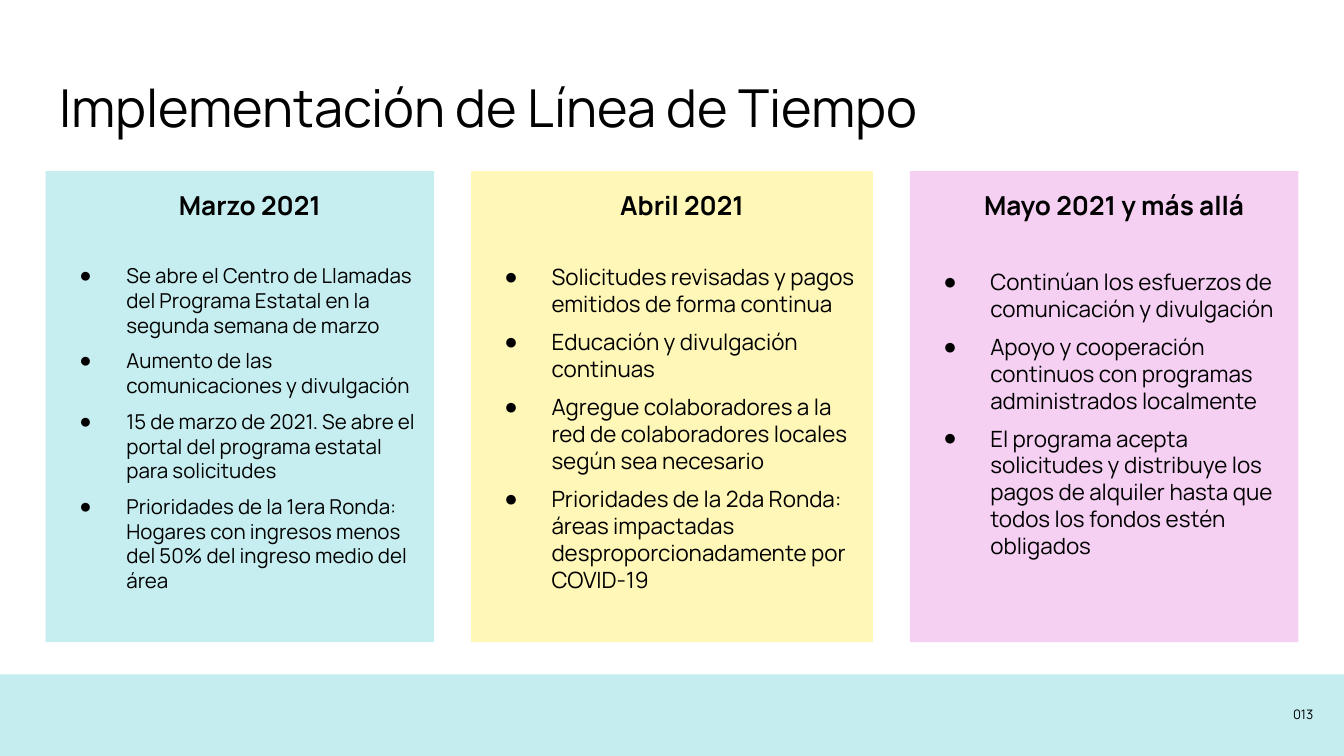
from dataclasses import dataclass

from lxml.etree import SubElement
from pptx import Presentation
from pptx.dml.color import RGBColor
from pptx.enum.shapes import MSO_SHAPE as Preset
from pptx.enum.text import MSO_ANCHOR as Anchor, MSO_AUTO_SIZE as AutoSize, PP_ALIGN as Align
from pptx.oxml.ns import qn
from pptx.util import Inches, Pt

WIDTH = Inches(10)
HEIGHT = WIDTH * 9 // 16
FONT = "Manrope"
BULLET_FONT = "Arial"
COLORS = {
    "text": "000000",
    "band": "C5ECEF",
    "march": "C6EDEF",
    "april": "FFF391",
    "may": "F0B7EE",
}
MARGIN = 3.4
COLUMN_TOP, COLUMN_HEIGHT = 22.64, 62.3


@dataclass(frozen=True)
class PercentBox:
    left: float
    top: float
    width: float
    height: float

    def lengths(self) -> tuple:
        return (int(WIDTH * self.left / 100), int(HEIGHT * self.top / 100),
                int(WIDTH * self.width / 100), int(HEIGHT * self.height / 100))


@dataclass(frozen=True)
class Column:
    heading: str
    items: tuple
    color: str
    opacity: int
    width: float
    size: int
    first_gap: float


COLUMNS = (
    Column("Marzo 2021", (
        "Se abre el Centro de Llamadas del Programa Estatal en la segunda semana de marzo",
        "Aumento de las comunicaciones y divulgación",
        "15 de marzo de 2021. Se abre el portal del programa estatal para solicitudes",
        "Prioridades de la 1era Ronda: Hogares con ingresos menos del 50% del ingreso medio del área",
    ), "march", 100, 28.9, 11, 22.8),
    Column("Abril 2021", (
        "Solicitudes revisadas y pagos emitidos de forma continua",
        "Educación y divulgación continuas",
        "Agregue colaboradores a la red de colaboradores locales según sea necesario",
        "Prioridades de la 2da Ronda: áreas impactadas desproporcionadamente por COVID-19",
    ), "april", 65, 29.9, 12, 22.8),
    Column("Mayo 2021 y más allá", (
        "Continúan los esfuerzos de comunicación y divulgación",
        "Apoyo y cooperación continuos con programas administrados localmente",
        "El programa acepta solicitudes y distribuye los pagos de alquiler hasta que todos los fondos estén obligados",
    ), "may", 65, 28.9, 12, 25.3),
)


def place(shape, box: PercentBox) -> None:
    shape.left, shape.top, shape.width, shape.height = box.lengths()


def fill_shape(shape, color: str, opacity: int = 100) -> None:
    shape.fill.solid()
    shape.fill.fore_color.rgb = RGBColor.from_string(COLORS[color])
    shape.line.fill.background()
    if opacity < 100:
        rgb = shape.fill._xPr.find(f".//{qn('a:srgbClr')}")
        SubElement(rgb, qn("a:alpha"), val=str(opacity * 1000))


def add_rectangle(slide, box: PercentBox):
    shape = slide.shapes.add_shape(Preset.RECTANGLE, *box.lengths())
    shape.shadow.inherit = False
    return shape


def prepare_frame(shape, anchor=Anchor.TOP):
    frame = shape.text_frame
    frame.word_wrap = True
    frame.auto_size = AutoSize.NONE
    frame.vertical_anchor = anchor
    frame.margin_left = frame.margin_right = Inches(0.1)
    frame.margin_top = frame.margin_bottom = Inches(0.1)
    return frame


def format_paragraph(paragraph, size: float, bold: bool = False, align=Align.LEFT,
                     spacing: float = 1.0, before: float = 0) -> None:
    paragraph.alignment = align
    paragraph.line_spacing = spacing
    paragraph.space_before = Pt(before)
    for run in paragraph.runs:
        run.font.name = FONT
        run.font.size = Pt(size)
        run.font.bold = bold
        run.font.color.rgb = RGBColor.from_string(COLORS["text"])


def set_indent(paragraph, left: float, hanging: float = 0, bullet: str = "") -> None:
    properties = paragraph._p.get_or_add_pPr()
    properties.set("marL", str(Inches(left)))
    properties.set("indent", str(-Inches(hanging)))
    if bullet:
        color = SubElement(properties, qn("a:buClr"))
        SubElement(color, qn("a:srgbClr"), val=COLORS["text"])
        SubElement(properties, qn("a:buFont"), typeface=BULLET_FONT)
        SubElement(properties, qn("a:buChar"), char=bullet)
    else:
        SubElement(properties, qn("a:buNone"))


def write_column(shape, column: Column) -> None:
    fill_shape(shape, column.color, column.opacity)
    frame = prepare_frame(shape)
    frame.text = "\n".join((column.heading, *column.items))
    heading, *items = frame.paragraphs
    set_indent(heading, 0.15)
    format_paragraph(heading, 14, bold=True, align=Align.CENTER, spacing=1.15)
    for index, paragraph in enumerate(items):
        set_indent(paragraph, 0.5, 0.35, "●")
        format_paragraph(paragraph, column.size, before=6 if index else column.first_gap)


def write_line(shape, text: str, size: float, align=Align.LEFT, anchor=Anchor.TOP) -> None:
    frame = prepare_frame(shape, anchor)
    frame.text = text
    format_paragraph(frame.paragraphs[0], size, align=align)


def main() -> None:
    presentation = Presentation()
    presentation.slide_width, presentation.slide_height = WIDTH, HEIGHT
    slide = presentation.slides.add_slide(presentation.slide_layouts[1])

    title = slide.shapes.title
    place(title, PercentBox(MARGIN, 8.2, 100 - 2 * MARGIN, 11.2))
    write_line(title, "Implementación de Línea de Tiempo", 28)

    fill_shape(add_rectangle(slide, PercentBox(0, 89.2, 100, 10.8)), "band")
    number = slide.shapes.add_textbox(*PercentBox(92.7, 90.7, 6, 7.6).lengths())
    write_line(number, "013", 7, Align.RIGHT, Anchor.MIDDLE)

    free_width = 100 - 2 * MARGIN - sum(column.width for column in COLUMNS)
    gap = free_width / (len(COLUMNS) - 1)
    left = MARGIN
    for index, column in enumerate(COLUMNS):
        box = PercentBox(left, COLUMN_TOP, column.width, COLUMN_HEIGHT)
        shape = add_rectangle(slide, box) if index else slide.placeholders[1]
        place(shape, box)
        write_column(shape, column)
        left += column.width + gap

    presentation.save("out.pptx")


if __name__ == "__main__":
    main()
